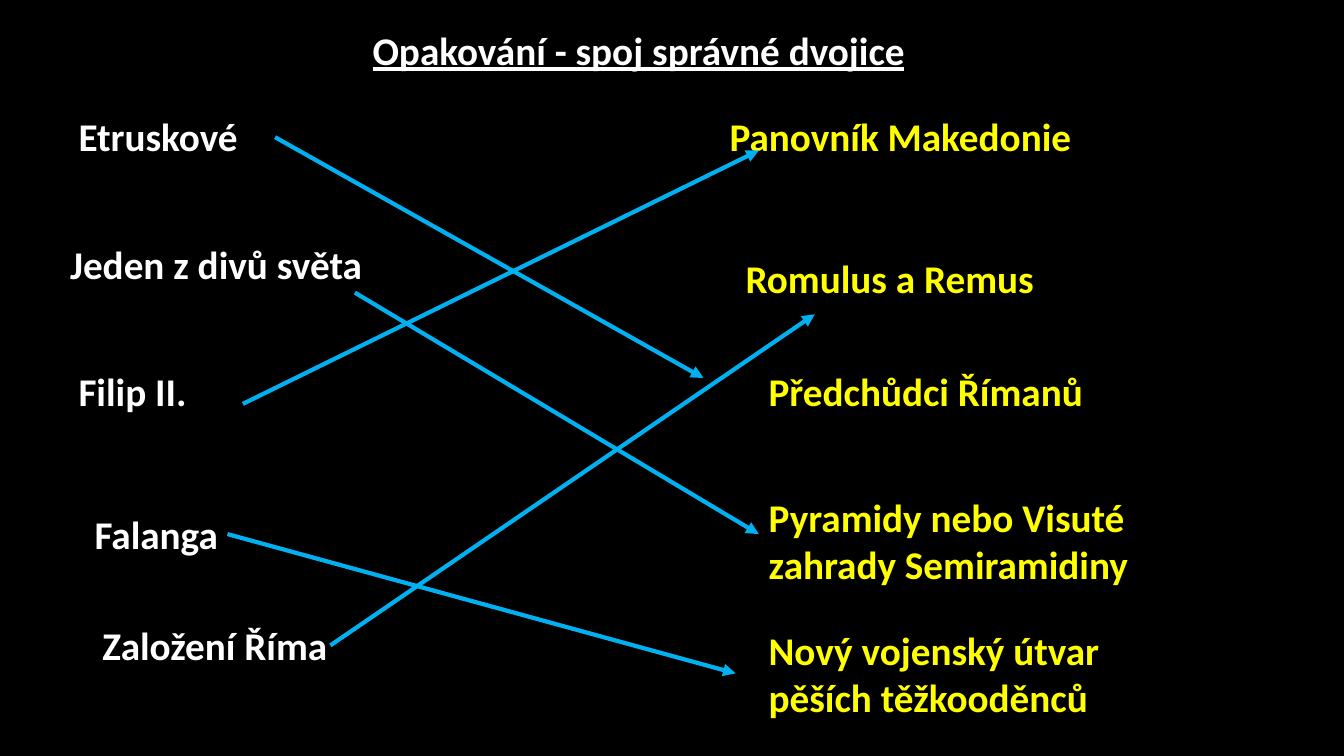
from lxml import etree
from pptx import Presentation
from pptx.dml.color import RGBColor
from pptx.enum.shapes import MSO_CONNECTOR
from pptx.enum.text import MSO_AUTO_SIZE
from pptx.oxml.ns import qn
from pptx.util import Pt

WHITE, YELLOW, BLUE, BLACK = "FFFFFF", "FFFF00", "00B0F0", "000000"
LINE_H, TWO_LINE_H = 41, 75

TERMS = [
    ("Etruskové", 6, 0, 187),
    ("Jeden z divů světa", 0, 91, 335),
    ("Filip II.", 6, 181.5, 170),
    ("Falanga", 17.5, 284, 176),
    ("Založení Říma", 23, 363, 215),
]
ANSWERS = [
    ("Panovník Makedonie", 0, 0, 323),
    ("Romulus a Remus", 11.5, 101, 289),
    ("Předchůdci Římanů", 28, 181.5, 329),
    ("Pyramidy nebo Visuté zahrady Semiramidiny", 28, 272, 351, TWO_LINE_H),
    ("Nový vojenský útvar\npěších těžkooděnců", 28, 367, 329, TWO_LINE_H),
]
MATCHES = [
    (153.5, 21, 459.5, 193),
    (210.5, 132, 499, 304.5),
    (130.5, 211.5, 499, 30.5),
    (119.5, 304.5, 482.5, 404),
    (193, 384, 539, 147.5),
]


def rgb(color):
    """Turn a hex string into a colour."""
    return RGBColor.from_string(color)


def add_text(s, text, x, y, w, h=LINE_H, color=WHITE, underline=None):
    """Add a bold text box at the given place."""
    tf = s.shapes.add_textbox(Pt(x), Pt(y), Pt(w), Pt(h)).text_frame
    tf.word_wrap = True
    tf.auto_size = MSO_AUTO_SIZE.SHAPE_TO_FIT_TEXT
    p = tf.paragraphs[0]
    p.text = text.replace("\n", "\v")
    for r in p.runs:
        r.font.name = "Calibri"
        r.font.size = Pt(28)
        r.font.bold = True
        r.font.underline = underline
        r.font.color.rgb = rgb(color)


def add_arrow(s, x1, y1, x2, y2):
    """Add a blue arrow between two points."""
    sp = s.shapes.add_connector(
        MSO_CONNECTOR.STRAIGHT, Pt(x1), Pt(y1), Pt(x2), Pt(y2))
    sp.line.color.rgb = rgb(BLUE)
    sp.line.width = Pt(3)
    etree.SubElement(sp.line._get_or_add_ln(), qn("a:tailEnd"), type="triangle")
    etree.SubElement(sp._element.spPr, qn("a:effectLst"))


def add_column(s, x, y, entries, color):
    """Place one column of expressions relative to its top left corner."""
    for text, dx, dy, *size in entries:
        add_text(s, text, x + dx, y + dy, *size, color=color)


def add_matches(s, x, y):
    """Draw the matching arrows relative to the top left corner."""
    for x1, y1, x2, y2 in MATCHES:
        add_arrow(s, x + x1, y + y1, x + x2, y + y2)


def main():
    """Build the matching exercise slide."""
    prs = Presentation()
    prs.slide_width, prs.slide_height = Pt(960), Pt(540)
    s = prs.slides.add_slide(prs.slide_layouts[6])
    s.background.fill.solid()
    s.background.fill.fore_color.rgb = rgb(BLACK)
    add_text(s, "Opakování - spoj správné dvojice", 259, 15, 431, underline=True)
    add_column(s, 43, 77, TERMS, WHITE)
    add_column(s, 514, 77, ANSWERS, YELLOW)
    add_matches(s, 43, 77)
    prs.save("out.pptx")


if __name__ == "__main__":
    main()
